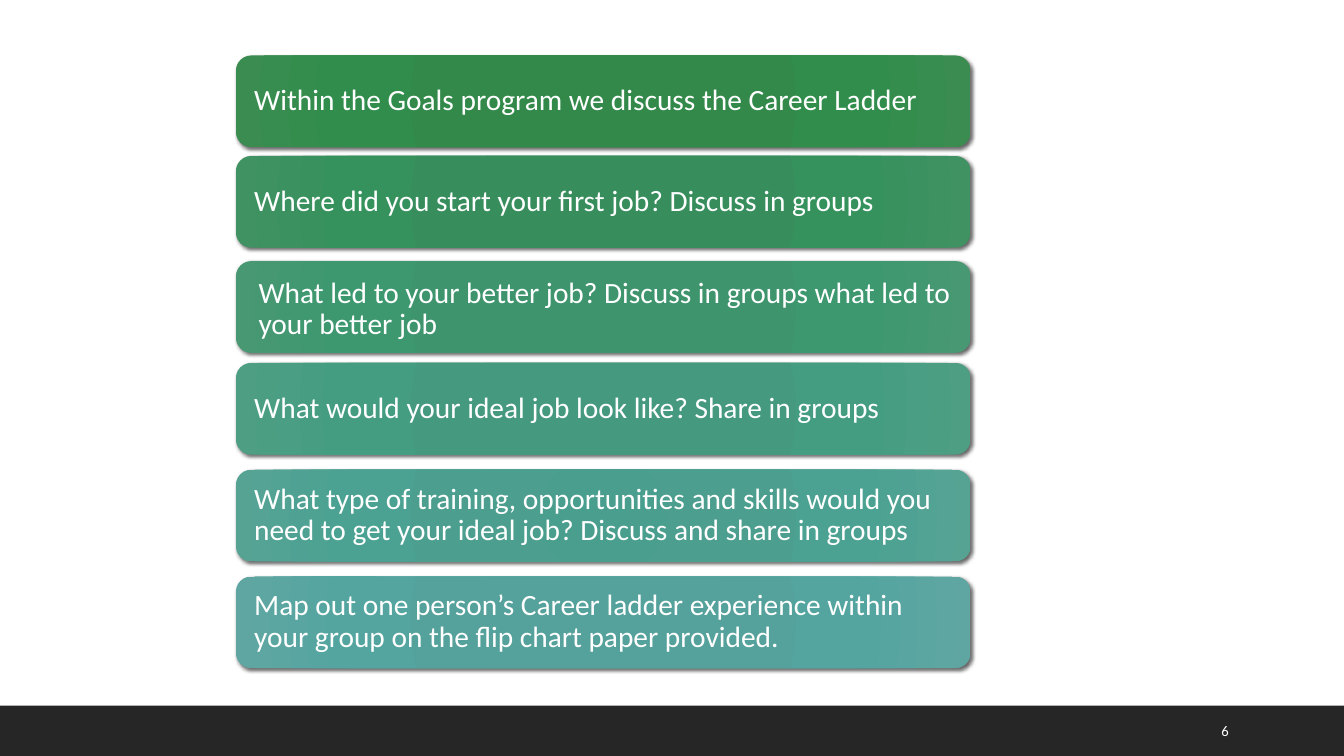
from lxml import etree
from pptx import Presentation
from pptx.dml.color import RGBColor
from pptx.enum.shapes import MSO_SHAPE
from pptx.enum.text import MSO_ANCHOR, PP_ALIGN
from pptx.oxml import parse_xml
from pptx.oxml.ns import nsdecls, qn
from pptx.util import Pt

RECTANGLE, ROUNDED = MSO_SHAPE.RECTANGLE, MSO_SHAPE.ROUNDED_RECTANGLE
MIDDLE, LEFT = MSO_ANCHOR.MIDDLE, PP_ALIGN.LEFT

EVEN_INSETS = (9.9, 6.5, 9.4, 6.5)
SHIFTED_INSETS = (13, 10.1, 6.5, 6.5)
STOPS = (0, 34, 70, 100)
CARDS = [
    (39.6, "Within the Goals program we discuss the Career Ladder",
     ("2F8949", "32894A", "318D4B", "3A8C51"), EVEN_INSETS),
    (111.4, "Where did you start your first job? Discuss in groups",
     ("358F5B", "378E5C", "36925D", "409262"), EVEN_INSETS),
    (186.5, "What led to your better job? Discuss in groups what led to your better job",
     ("3C946C", "3E946D", "3D986F", "479873"), SHIFTED_INSETS),
    (259.2, "What would your ideal job look like? Share in groups",
     ("429A7E", "45997E", "449D81", "4E9E84"), EVEN_INSETS),
    (335.5, "What type of training, opportunities and skills would you need to get "
     "your ideal job? Discuss and share in groups",
     ("499E8E", "4C9E8F", "4BA292", "56A394"), EVEN_INSETS),
    (411.8, "Map out one person’s Career ladder experience within your group on "
     "the flip chart paper provided.",
     ("52A19C", "55A19C", "54A5A0", "5FA6A2"), EVEN_INSETS),
]
CARD_LEFT, CARD_WIDTH, CARD_HEIGHT = 168.5, 524.9, 65.5
PAGE_WIDTH, PAGE_HEIGHT, FOOTER_HEIGHT = 960, 540, 36
PAGE_NUMBER = "6"


def color(value):
    return RGBColor.from_string(value)


def write(shape, text, size):
    frame = shape.text_frame
    frame.word_wrap = True
    frame.vertical_anchor = MIDDLE
    para = frame.paragraphs[0]
    para.text = text
    para.alignment = LEFT
    para.font.size = Pt(size)
    para.font.name = "Calibri"
    para.font.color.rgb = color("FFFFFF")
    return frame, para


def shade(card, colors):
    card.fill.gradient()
    gradient = card._element.spPr.find(qn("a:gradFill"))
    stops = "".join(
        f'<a:gs pos="{stop * 1000}"><a:srgbClr val="{value}"/></a:gs>'
        for stop, value in zip(STOPS, colors))
    gradient.getparent().replace(gradient, parse_xml(
        f'<a:gradFill {nsdecls("a")} rotWithShape="1"><a:gsLst>{stops}</a:gsLst>'
        '<a:path path="circle"><a:fillToRect l="100000" t="100000" '
        'r="100000" b="100000"/></a:path></a:gradFill>'))


def cast_shadow(card):
    card.shadow.inherit = False
    effects = card._element.spPr.find(qn("a:effectLst"))
    shadow = etree.SubElement(
        effects, qn("a:outerShdw"), blurRad=str(Pt(3)), dist=str(Pt(2)),
        dir="2700000", algn="tl", rotWithShape="0")
    black = etree.SubElement(shadow, qn("a:srgbClr"), val="000000")
    etree.SubElement(black, qn("a:alpha"), val="60000")


def add_card(page, top, text, colors, insets):
    card = page.shapes.add_shape(
        ROUNDED, Pt(CARD_LEFT), Pt(top), Pt(CARD_WIDTH), Pt(CARD_HEIGHT))
    shade(card, colors)
    card.line.fill.background()
    cast_shadow(card)
    frame, para = write(card, text, 21)
    para.line_spacing = 0.9
    (frame.margin_left, frame.margin_top,
     frame.margin_right, frame.margin_bottom) = map(Pt, insets)


def add_footer(page):
    bar = page.shapes.add_shape(
        RECTANGLE, 0, Pt(PAGE_HEIGHT - FOOTER_HEIGHT), Pt(PAGE_WIDTH), Pt(FOOTER_HEIGHT))
    bar.shadow.inherit = False
    bar.fill.solid()
    bar.fill.fore_color.rgb = color("262626")
    bar.line.fill.background()
    number = page.shapes.add_textbox(Pt(865.4), Pt(507.6), Pt(61.2), Pt(28.8))
    write(number, PAGE_NUMBER, 10.5)


def main():
    """Build the career ladder discussion slide."""
    deck = Presentation()
    deck.slide_width, deck.slide_height = Pt(PAGE_WIDTH), Pt(PAGE_HEIGHT)
    page = deck.slides.add_slide(deck.slide_layouts[6])
    add_footer(page)
    for card in CARDS:
        add_card(page, *card)
    deck.save("out.pptx")


if __name__ == "__main__":
    main()
